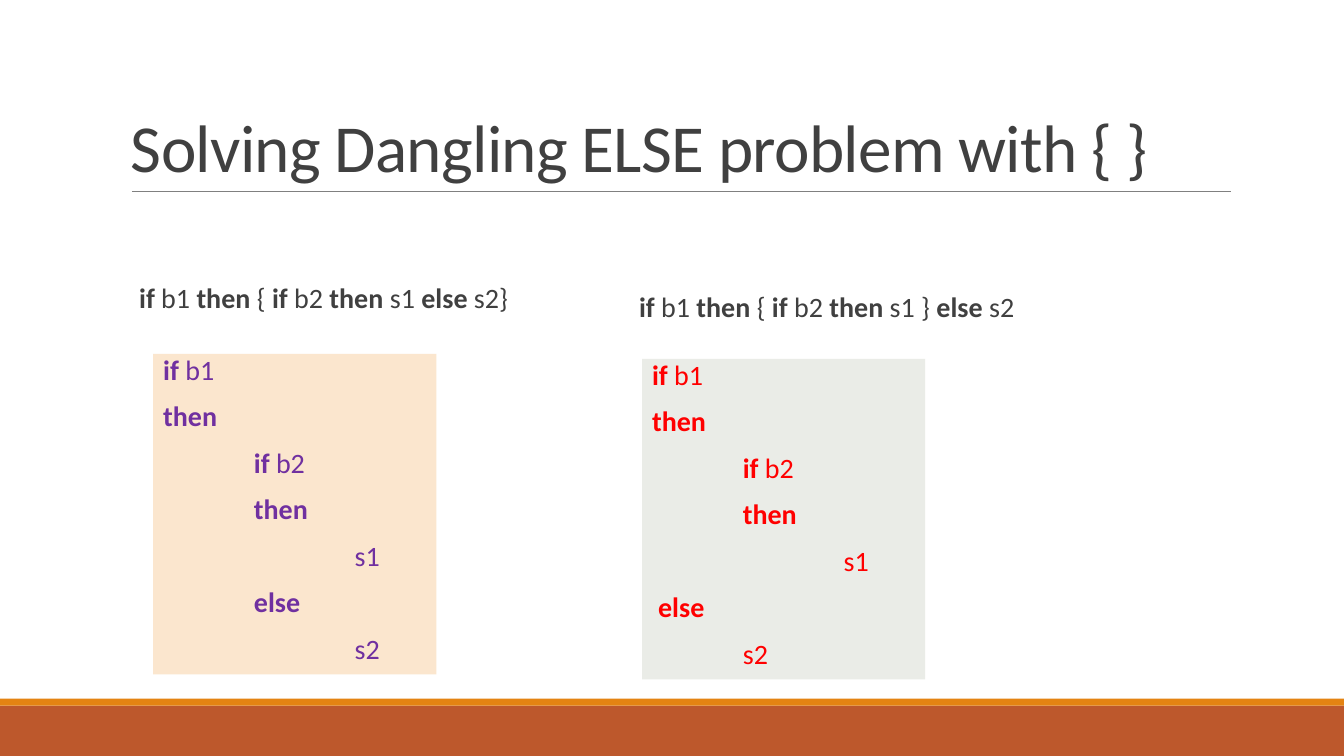
"""Build the slide on solving the dangling ELSE problem with braces."""
from itertools import groupby

from lxml import etree
from pptx import Presentation
from pptx import util as u
from pptx.dml.color import RGBColor
from pptx.enum import shapes, text
from pptx.oxml.ns import qn

COLORS = {
    "footer": "BD582C", "stripe": "E48312", "rule": "808080", "body": "404040",
    "peach": "FBE6CE", "sage": "EAECE7", "purple": "7030A0", "red": "FF0000",
}
FONT = "Calibri"
KEYWORDS = {"if", "then", "else"}
WIDTH, HEIGHT = 960, 540
TITLE = "Solving Dangling ELSE problem with { }"
TITLE_BOX = (86.4, 22.3, 792, 114.5)
BANDS = [((0, 504, WIDTH, 36), "footer"), ((0, 499, WIDTH, 5), "stripe")]
RULE = (94.3, 879.1, 136.8)
STATEMENT_SIZE = (296.6, 34.6)
CODE_SIZE = (202.3, 229)
BASE_INDENT, NESTED, DEEP, SLIGHT = 7.2, 72, 144, 11.5
OPENING = [("if b1", BASE_INDENT), ("then", BASE_INDENT),
           ("if b2", NESTED), ("then", NESTED), ("s1", DEEP)]
EXAMPLES = [
    {"statement": "if b1 then { if b2 then s1 else s2}", "statement_at": (92.2, 199.4),
     "lines": OPENING + [("else", NESTED), ("s2", DEEP)],
     "code_at": (109.4, 252.7), "fill": "peach", "color": "purple"},
    {"statement": "if b1 then { if b2 then s1 } else s2", "statement_at": (449.3, 205.9),
     "lines": OPENING + [("else", SLIGHT), ("s2", NESTED)],
     "code_at": (458.6, 256.3), "fill": "sage", "color": "red"},
]


def rgb(name):
    """Return the named colour."""
    return RGBColor.from_string(COLORS[name])


def add_box(slide, box, fill):
    """Add a plain filled rectangle."""
    shape = slide.shapes.add_shape(shapes.MSO_SHAPE.RECTANGLE, *map(u.Pt, box))
    shape.shadow.inherit = False
    shape.fill.solid()
    shape.fill.fore_color.rgb = rgb(fill)
    shape.line.fill.background()
    return shape


def add_rule(slide, left, right, top):
    """Add the thin line under the title."""
    line = slide.shapes.add_connector(
        shapes.MSO_CONNECTOR.STRAIGHT, u.Pt(left), u.Pt(top), u.Pt(right), u.Pt(top))
    line.line.width = u.Pt(0.5)
    line.line.color.rgb = rgb("rule")
    etree.SubElement(line.element.spPr, qn("a:effectLst"))


def style_paragraph(paragraph, size, color, spacing):
    """Set the font, alignment and line spacing of a paragraph."""
    paragraph.alignment = text.PP_ALIGN.LEFT
    paragraph.line_spacing = spacing
    paragraph.font.name = FONT
    paragraph.font.size = u.Pt(size)
    paragraph.font.color.rgb = rgb(color)


def add_title(slide):
    """Add the title, resting on the rule."""
    frame = slide.shapes.add_textbox(*map(u.Pt, TITLE_BOX)).text_frame
    frame.word_wrap = True
    frame.vertical_anchor = text.MSO_ANCHOR.BOTTOM
    paragraph = frame.paragraphs[0]
    run = paragraph.add_run()
    run.text = TITLE
    style_paragraph(paragraph, 48, "body", 0.85)
    run.font._element.set("spc", "-50")


def write_code(shape, lines, color, spacing):
    """Write indented lines of code with bold keywords."""
    frame = shape.text_frame
    frame.word_wrap = True
    frame.vertical_anchor = text.MSO_ANCHOR.TOP
    frame.margin_left = frame.margin_right = 0
    for index, (line, indent) in enumerate(lines):
        paragraph = frame.add_paragraph() if index else frame.paragraphs[0]
        style_paragraph(paragraph, 20, color, spacing)
        paragraph.space_before, paragraph.space_after = u.Pt(12), u.Pt(2)
        paragraph._p.get_or_add_pPr().set("marL", str(u.Pt(indent)))
        groups = groupby(line.split(), key=lambda word: word in KEYWORDS)
        for position, (is_keyword, words) in enumerate(groups):
            run = paragraph.add_run()
            run.text = (" " if position else "") + " ".join(words)
            run.font.bold = is_keyword


def main():
    """Build and save the presentation."""
    presentation = Presentation()
    presentation.slide_width, presentation.slide_height = u.Pt(WIDTH), u.Pt(HEIGHT)
    slide = presentation.slides.add_slide(presentation.slide_layouts[6])
    for box, fill in BANDS:
        add_box(slide, box, fill)
    add_rule(slide, *RULE)
    add_title(slide)
    for example in EXAMPLES:
        statement = slide.shapes.add_textbox(
            *map(u.Pt, example["statement_at"] + STATEMENT_SIZE))
        write_code(statement, [(example["statement"], BASE_INDENT)], "body", 0.9)
        code = add_box(slide, example["code_at"] + CODE_SIZE, example["fill"])
        write_code(code, example["lines"], example["color"], 0.8)
    presentation.save("out.pptx")


if __name__ == "__main__":
    main()
